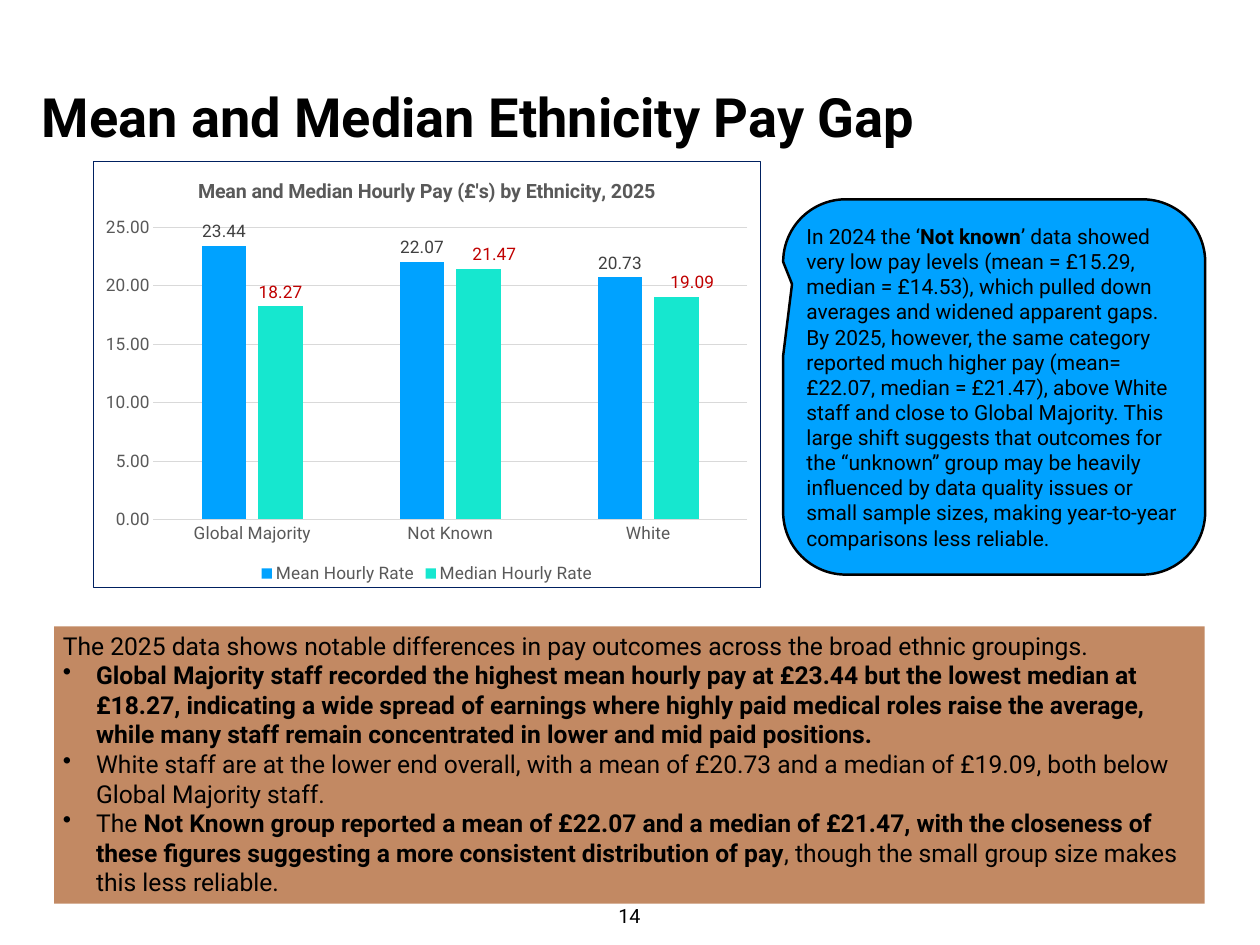
import pptx
import pptx.chart.data
import pptx.dml.color
import pptx.enum.chart
import pptx.enum.shapes
import pptx.enum.text
import pptx.oxml
import pptx.oxml.ns
import pptx.util

Pt = pptx.util.Pt
FACE = "Roboto"
HUES = {
    "black": "000000", "blue": "00A2FF", "teal": "16E7CF", "tan": "C28963",
    "grey": "595959", "dark": "404040", "red": "C00000", "rule": "D9D9D9",
    "navy": "002060",
}
GROUPS = ["Global Majority", "Not Known", "White"]
RATES = [
    ("Mean Hourly Rate", [23.44, 22.07, 20.73], "blue", "dark"),
    ("Median Hourly Rate", [18.27, 21.47, 19.09], "teal", "red"),
]
# Each paragraph is a list of (text, bold) runs
NOTE = [
    ("In 2024 the ‘", False), ("Not known", True),
    ("’ data showed very low pay levels (mean = £15.29, median = £14.53), "
     "which pulled down averages and widened apparent gaps. By 2025, however, "
     "the same category reported much higher pay (mean= £22.07, median = "
     "£21.47), above White staff and close to Global Majority. This large "
     "shift suggests that outcomes for the “unknown” group may be heavily "
     "influenced by data quality issues or small sample sizes, making "
     "year-to-year comparisons less reliable.", False),
]
LEAD = [("The 2025 data shows notable differences in pay outcomes across the "
         "broad ethnic groupings.", False)]
POINTS = [
    [("Global Majority staff recorded the highest mean hourly pay at £23.44 "
      "but the lowest median at £18.27, indicating a wide spread of earnings "
      "where highly paid medical roles raise the average, while many staff "
      "remain concentrated in lower and mid paid positions.", True)],
    [("White staff are at the lower end overall, with a mean of £20.73 and a "
      "median of £19.09, both below Global Majority staff.", False)],
    [("The ", False),
     ("Not Known group reported a mean of £22.07 and a median of £21.47, with "
      "the closeness of these figures suggesting a more consistent "
      "distribution of pay", True),
     (", though the small group size makes this less reliable.", False)],
]


def rgb(hue):
    return pptx.dml.color.RGBColor.from_string(HUES[hue])


def style(font, size, hue="black", bold=False):
    font.name, font.size, font.bold = FACE, Pt(size), bold
    font.color.rgb = rgb(hue)


def paint(fmt, hue):
    fmt.solid()
    fmt.fore_color.rgb = rgb(hue)


def write(para, runs, size, bullet=False):
    para.alignment = pptx.enum.text.PP_ALIGN.LEFT
    if bullet:
        props = para._p.get_or_add_pPr()
        props.set("marL", str(Pt(27)))
        props.set("indent", str(-Pt(27)))
        mark = pptx.oxml.ns.qn("a:buChar")
        props.append(props.makeelement(mark, {"char": "•"}))
    style(para.font, size, bold=runs[0][1])
    for text, bold in runs:
        run = para.add_run()
        run.text = text
        if len(runs) > 1:
            run.font.bold = bold


def pad(frame, gap):
    frame.margin_left = frame.margin_right = Pt(gap)
    frame.margin_top = frame.margin_bottom = Pt(gap)


def panel(slide, kind, box, hue):
    shape = slide.shapes.add_shape(kind, *map(Pt, box))
    shape.shadow.inherit = False
    paint(shape.fill, hue)
    shape.text_frame.word_wrap = True
    return shape


def label(slide, box, text, size, bold=False):
    frame = slide.shapes.add_textbox(*map(Pt, box)).text_frame
    pad(frame, 4)
    frame.vertical_anchor = pptx.enum.text.MSO_ANCHOR.MIDDLE
    frame.word_wrap = bold
    write(frame.paragraphs[0], [(text, bold)], size)
    return frame.paragraphs[0]


def layout(**parts):
    tags = "".join(f'<c:{k} val="{v}"/>' for k, v in parts.items())
    return pptx.oxml.parse_xml(
        f'<c:layout {pptx.oxml.ns.nsdecls("c")}>'
        f"<c:manualLayout>{tags}</c:manualLayout></c:layout>")


def frame_plot(chart):
    # Plot area position and chart border
    root = chart._chartSpace
    area = root.find(".//" + pptx.oxml.ns.qn("c:plotArea"))
    for old in area.findall(pptx.oxml.ns.qn("c:layout")):
        area.remove(old)
    area.insert(0, layout(layoutTarget="inner", xMode="edge", yMode="edge",
                          x=0.09, y=0.155, w=0.89, h=0.685))
    root.find(pptx.oxml.ns.qn("c:chart")).addnext(pptx.oxml.parse_xml(
        f'<c:spPr {pptx.oxml.ns.nsdecls("c", "a")}><a:noFill/>'
        f'<a:ln w="{Pt(0.75)}"><a:solidFill><a:srgbClr val="{HUES["navy"]}"/>'
        "</a:solidFill></a:ln></c:spPr>"))


def axes(chart):
    none = pptx.enum.chart.XL_TICK_MARK.NONE
    for axis in (chart.category_axis, chart.value_axis):
        axis.major_tick_mark = axis.minor_tick_mark = none
        style(axis.tick_labels.font, 14, "grey")
    val = chart.value_axis
    val.minimum_scale, val.maximum_scale, val.major_unit = 0, 25, 5
    val.tick_labels.number_format = "#,##0.00"
    val.tick_labels.number_format_is_linked = False
    val.format.line.fill.background()
    val.has_major_gridlines = True
    for line in (chart.category_axis.format.line,
                 val.major_gridlines.format.line):
        line.width = Pt(0.75)
        paint(line.fill, "rule")


def bars(chart):
    spot = pptx.enum.chart.XL_LABEL_POSITION.OUTSIDE_END
    plot = chart.plots[0]
    plot.gap_width, plot.overlap, plot.vary_by_categories = 219, -27, False
    for series, (_, _, hue, ink) in zip(plot.series, RATES):
        paint(series.format.fill, hue)
        tags = series.data_labels
        tags.show_value, tags.position = True, spot
        tags.number_format = "#,##0.00"
        tags.number_format_is_linked = False
        style(tags.font, 14, ink)
    # Median labels nudged right, clear of the mean bars
    for i in (1, 2):
        tag = series.points[i].data_label
        style(tag.font, 14, ink)
        tag.position = spot
    for idx in series._element.findall(
            ".//" + pptx.oxml.ns.qn("c:dLbl") + "/" + pptx.oxml.ns.qn("c:idx")):
        idx.addnext(layout(x=0.024, y=0))


def pay_chart(slide, box):
    data = pptx.chart.data.CategoryChartData(number_format="#,##0.00")
    data.categories = GROUPS
    for name, vals, _, _ in RATES:
        data.add_series(name, vals)
    kind = pptx.enum.chart.XL_CHART_TYPE.COLUMN_CLUSTERED
    chart = slide.shapes.add_chart(kind, *map(Pt, box), data).chart
    style(chart.font, 10)
    title = chart.chart_title.text_frame
    title.text = "Mean and Median Hourly Pay (£'s) by Ethnicity, 2025"
    style(title.paragraphs[0].font, 16, "grey", True)
    chart.has_legend = True
    chart.legend.position = pptx.enum.chart.XL_LEGEND_POSITION.BOTTOM
    chart.legend.include_in_layout = False
    style(chart.legend.font, 14, "grey")
    axes(chart)
    bars(chart)
    frame_plot(chart)


def callout(slide, box):
    kind = pptx.enum.shapes.MSO_SHAPE.ROUNDED_RECTANGULAR_CALLOUT
    shape = panel(slide, kind, box, "blue")
    for i, val in enumerate((-0.479, -0.274, 0.167)):
        shape.adjustments[i] = val
    shape.line.width = Pt(2)
    paint(shape.line.fill, "black")
    frame = shape.text_frame
    pad(frame, 4)
    frame.vertical_anchor = pptx.enum.text.MSO_ANCHOR.MIDDLE
    write(frame.paragraphs[0], NOTE, 17)


def summary(slide, box):
    shape = panel(slide, pptx.enum.shapes.MSO_SHAPE.RECTANGLE, box, "tan")
    shape.line.fill.background()
    frame = shape.text_frame
    frame.vertical_anchor = pptx.enum.text.MSO_ANCHOR.TOP
    write(frame.paragraphs[0], LEAD, 20)
    for runs in POINTS:
        write(frame.add_paragraph(), runs, 20, bullet=True)


def main():
    deck = pptx.Presentation()
    deck.slide_width, deck.slide_height = Pt(1024), Pt(768)
    slide = deck.slides.add_slide(deck.slide_layouts[6])
    label(slide, (30, 36, 823, 116), "Mean and Median Ethnicity Pay Gap", 44, True)
    pay_chart(slide, (75.5, 131, 543, 347))
    callout(slide, (636.5, 162, 343, 305))
    summary(slide, (44, 509, 935, 225.5))
    page = label(slide, (498, 732, 27, 25), "14", 16)
    page.alignment = pptx.enum.text.PP_ALIGN.CENTER
    deck.save("out.pptx")


if __name__ == "__main__":
    main()
